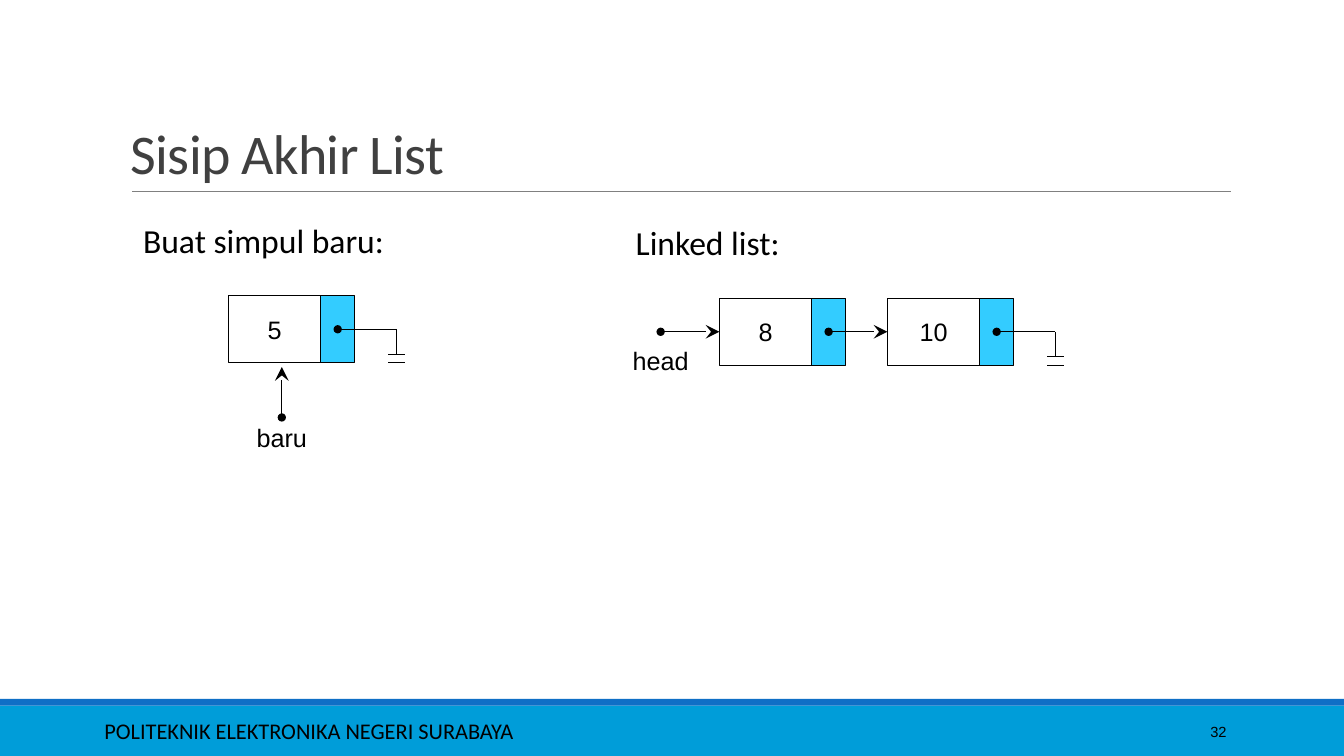
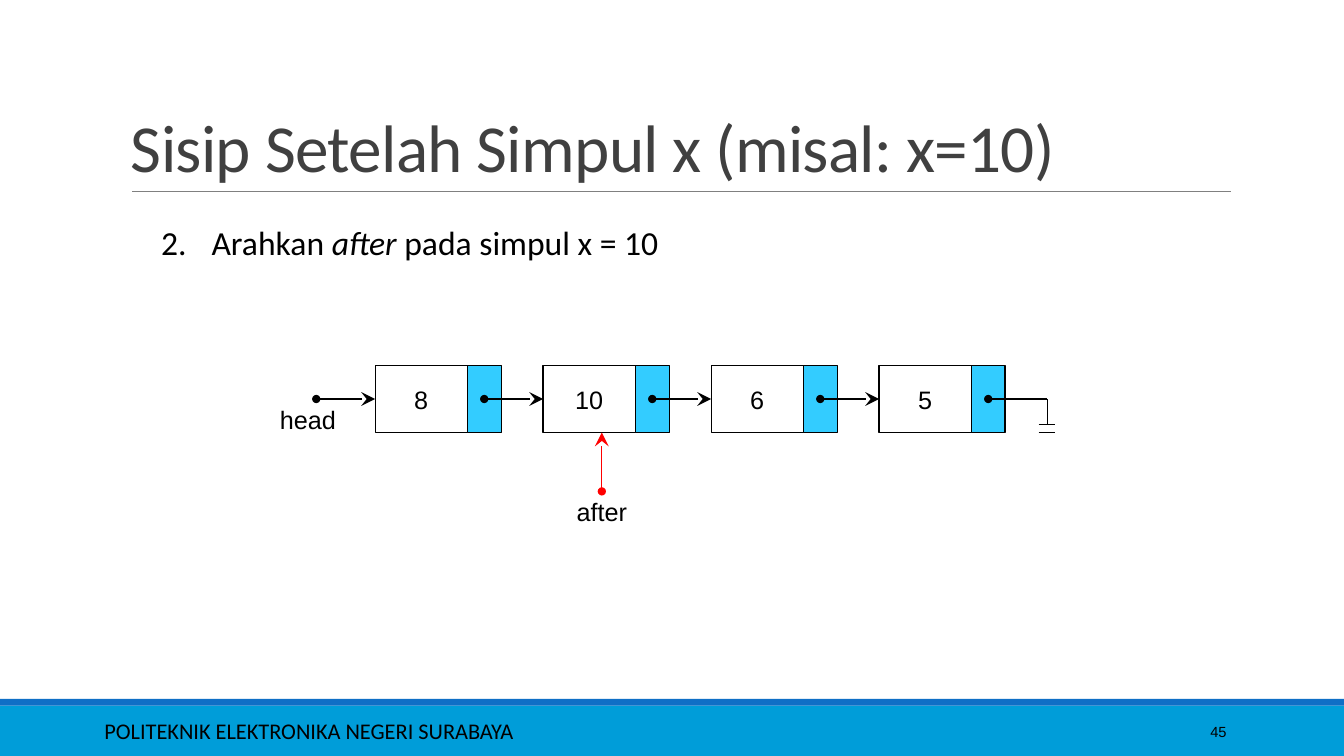
from lxml import etree
from pptx import Presentation
from pptx.dml.color import RGBColor
from pptx.enum.shapes import MSO_CONNECTOR, MSO_SHAPE
from pptx.enum.text import MSO_ANCHOR, PP_ALIGN
from pptx.oxml.ns import qn
from pptx.util import Inches, Pt

RECTANGLE = MSO_SHAPE.RECTANGLE
STRAIGHT = MSO_CONNECTOR.STRAIGHT
TOP, MIDDLE, BOTTOM = MSO_ANCHOR.TOP, MSO_ANCHOR.MIDDLE, MSO_ANCHOR.BOTTOM
LEFT, CENTER, RIGHT = PP_ALIGN.LEFT, PP_ALIGN.CENTER, PP_ALIGN.RIGHT
LEFT_SIDE = 1

COLORS = {
    "footer": "009DD9",
    "band": "0F6FC6",
    "rule": "808080",
    "title": "404040",
    "ink": "000000",
    "pointer": "33CCFF",
    "marker": "FF0000",
}
UNIT = Inches(1) // 12
COLUMNS, ROWS = 160, 90
DATA_WIDTH, POINTER_WIDTH, NODE_HEIGHT = 11, 4, 8
NODE_PITCH, LINK_LENGTH = 20, 7
LABEL_WIDTH, LABEL_HEIGHT = 14, 4.8


def grid(*counts):
    return [round(count * UNIT) for count in counts]


def color(name):
    return RGBColor.from_string(COLORS[name])


def add_box(shapes, box, fill=None, line=None):
    shape = shapes.add_shape(RECTANGLE, *grid(*box))
    shape.shadow.inherit = False
    if fill:
        shape.fill.solid()
        shape.fill.fore_color.rgb = color(fill)
    else:
        shape.fill.background()
    if line:
        shape.line.color.rgb = color(line)
        shape.line.width = Pt(0.75)
    else:
        shape.line.fill.background()
    return shape


def write(shape, text, size, font="Arial", ink="ink", align=LEFT, anchor=TOP):
    frame = shape.text_frame
    frame.word_wrap = True
    frame.vertical_anchor = anchor
    paragraph = frame.paragraphs[0]
    paragraph.text = text
    paragraph.alignment = align
    paragraph.font.name = font
    paragraph.font.size = Pt(size)
    paragraph.font.color.rgb = color(ink)
    return paragraph


def add_text(shapes, box, text, size, **style):
    return write(shapes.add_textbox(*grid(*box)), text, size, **style)


def add_line(shapes, start, end, ink="ink", width=0.75, dot=False, arrow=False):
    connector = shapes.add_connector(STRAIGHT, *grid(*start, *end))
    connector.line.color.rgb = color(ink)
    connector.line.width = Pt(width)
    outline = connector.line._get_or_add_ln()
    if dot:
        etree.SubElement(outline, qn("a:headEnd"), type="oval", w="med", len="med")
    if arrow:
        etree.SubElement(outline, qn("a:tailEnd"), type="stealth", w="lg", len="lg")
    etree.SubElement(connector._element.spPr, qn("a:effectLst"))
    return connector


def add_base(presentation, title, title_size, number):
    slide = presentation.slides.add_slide(presentation.slide_layouts[6])
    shapes = slide.shapes
    add_box(shapes, (0, 84, COLUMNS, 6), "footer")
    add_box(shapes, (0, 83.2, COLUMNS, 0.8), "band")
    add_line(shapes, (15.75, 22.8), (146.5, 22.8), "rule", 0.5)
    add_text(shapes, (11.25, 84.6, 101, LABEL_HEIGHT),
             "POLITEKNIK ELEKTRONIKA NEGERI SURABAYA", 16,
             font="Calibri", anchor=MIDDLE)
    heading = add_text(shapes, (14.4, 3.75, 132, 19), title, title_size,
                       font="Calibri", ink="title", anchor=BOTTOM)
    heading.line_spacing = 0.85
    heading.runs[0].font._element.set("spc", "-50")
    add_text(shapes, (130, 84.7, 17.2, LABEL_HEIGHT), str(number), 10.5,
             align=RIGHT, anchor=MIDDLE)
    return slide


def add_caption(slide, left, top, width, text):
    return add_text(slide.shapes, (left, top, width, 6), text, 24, font="Calibri")


def add_label(shapes, left, top, text):
    add_text(shapes, (left, top, LABEL_WIDTH, LABEL_HEIGHT), text, 18, align=CENTER)


def add_ground(shapes, left, top):
    corner = left + LINK_LENGTH
    add_line(shapes, (left, top), (corner, top), dot=True)
    add_line(shapes, (corner, top), (corner, top + 3))
    for bar in (top + 3, top + 4):
        add_line(shapes, (corner - 1, bar), (corner + 1, bar))


def add_chain(slide, left, top, values, head_offset=None):
    shapes = slide.shapes.add_group_shape().shapes
    middle = top + NODE_HEIGHT / 2
    data_cells, link_starts = [], []
    for index, value in enumerate(values):
        node_left = left + index * NODE_PITCH
        pointer_left = node_left + DATA_WIDTH
        cell = add_box(shapes, (node_left, top, DATA_WIDTH, NODE_HEIGHT), line="ink")
        write(cell, str(value), 18, align=CENTER, anchor=MIDDLE)
        add_box(shapes, (pointer_left, top, POINTER_WIDTH, NODE_HEIGHT), "pointer", "ink")
        data_cells.append(cell)
        link_starts.append(pointer_left + POINTER_WIDTH / 2)
    links = list(zip(link_starts, data_cells[1:]))
    if head_offset:
        links.append((left - LINK_LENGTH, data_cells[0]))
        across, down = head_offset
        add_label(shapes, left + across, middle + down, "head")
    for start, cell in links:
        link = add_line(shapes, (start, middle), (start + LINK_LENGTH, middle),
                        dot=True, arrow=True)
        link.end_connect(cell, LEFT_SIDE)
    add_ground(shapes, link_starts[-1], middle)
    return shapes


def add_marker(shapes, center, tip, length, text, ink="ink"):
    tail = tip + length
    add_line(shapes, (center, tail), (center, tip), ink, dot=True, arrow=True)
    add_label(shapes, center - LABEL_WIDTH / 2, tail, text)


def build_append_slide(presentation):
    slide = add_base(presentation, "Sisip Akhir List", 40, 32)
    new_node = add_chain(slide, 27.2, 35.2, [5])
    add_marker(new_node, 33.55, 43.7, 6, "baru")
    add_caption(slide, 15.85, 25.6, 34.5, "Buat simpul baru:")
    add_chain(slide, 85.65, 35.5, [8, 10], head_offset=(-14, 1))
    add_caption(slide, 74.5, 25.8, 31, "Linked list:")


def build_insert_after_slide(presentation):
    slide = add_base(presentation, "Sisip Setelah Simpul x (misal: x=10)", 48, 45)
    chain = add_chain(slide, 44.65, 43.5, [8, 10, 6, 5], head_offset=(-15, 0))
    add_marker(chain, 71.65, 51.5, 7, "after", "marker")
    step = add_caption(slide, 18, 25.8, 74, "Arahkan ")
    properties = step._p.get_or_add_pPr()
    properties.set("marL", str(Inches(0.5)))
    properties.set("indent", str(-Inches(0.5)))
    numbering = etree.Element(qn("a:buAutoNum"), type="arabicPeriod", startAt="2")
    properties.insert(0, numbering)
    emphasis = step.add_run()
    emphasis.text = "after "
    emphasis.font.italic = True
    step.add_run().text = "pada simpul x = 10"


def main():
    presentation = Presentation()
    presentation.slide_width, presentation.slide_height = grid(COLUMNS, ROWS)
    build_append_slide(presentation)
    build_insert_after_slide(presentation)
    presentation.save("out.pptx")


if __name__ == "__main__":
    main()
